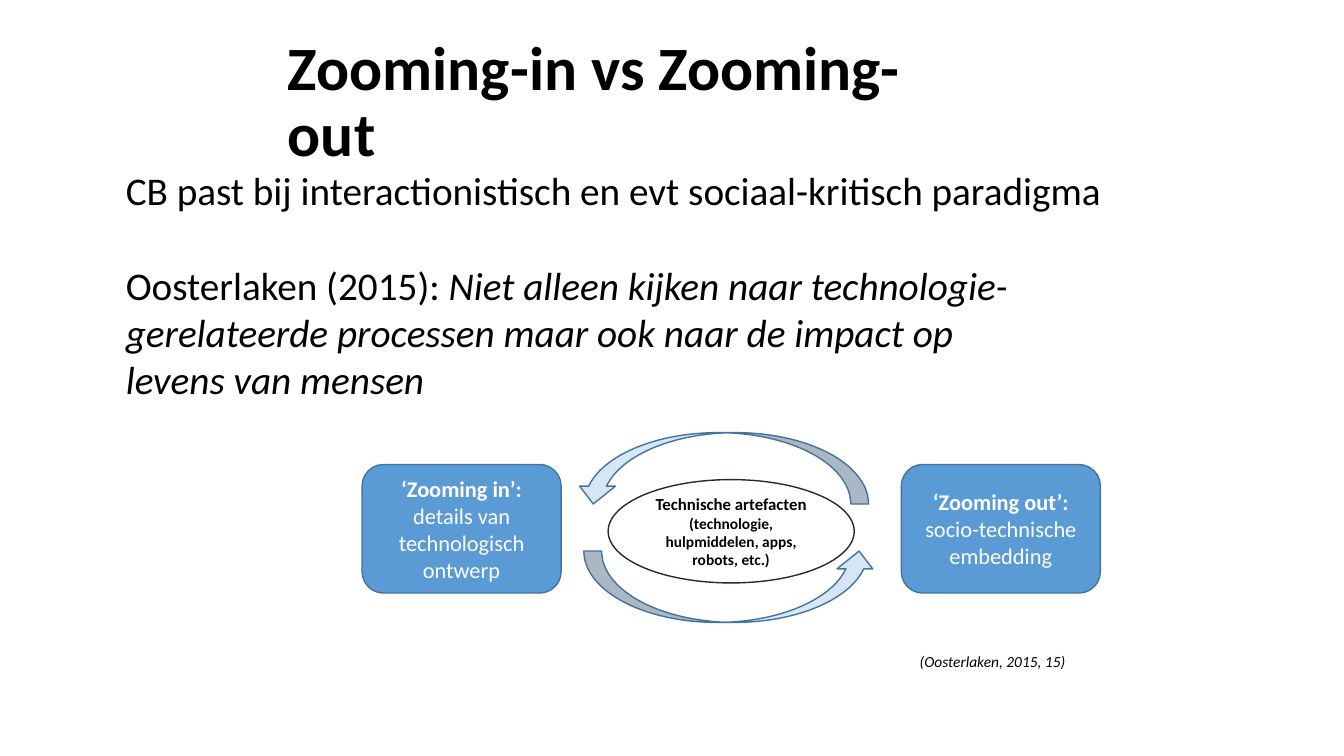
from pptx import Presentation
from pptx.dml.color import RGBColor
from pptx.enum.shapes import MSO_SHAPE
from pptx.enum.text import MSO_ANCHOR, PP_ALIGN
from pptx.util import Inches, Pt

COLOURS = {
    "text": "000000",
    "white": "FFFFFF",
    "box": "5B9BD5",
    "arrow": "D6E6F4",
    "outline": "43739E",
    "ellipse outline": "222A35",
}
COLUMNS, ROWS = 160, 90


def colour(name):
    return RGBColor.from_string(COLOURS[name])


class SlideBuilder:
    """Style and current slide; places are (column, row, columns, rows)."""

    font = "Calibri"

    def __init__(self, presentation):
        self.column = presentation.slide_width / COLUMNS
        self.row = presentation.slide_height / ROWS
        self.slide = presentation.slides.add_slide(presentation.slide_layouts[6])

    def place(self, left, top, width, height):
        return (round(left * self.column), round(top * self.row),
                round(width * self.column), round(height * self.row))

    def fill_text(self, frame, paragraphs, ink="text", align=PP_ALIGN.LEFT,
                  anchor=MSO_ANCHOR.TOP, wrap=True, line_spacing=None, gaps=()):
        """Each paragraph is a list of runs: (text, size, styles)."""
        frame.word_wrap = wrap
        frame.vertical_anchor = anchor
        for index, runs in enumerate(paragraphs):
            paragraph = frame.add_paragraph() if index else frame.paragraphs[0]
            paragraph.alignment = align
            if line_spacing:
                paragraph.line_spacing = line_spacing
            if index in gaps:
                paragraph.space_before = Pt(34)
            for text, size, styles in runs:
                run = paragraph.add_run()
                run.text = text
                run.font.name = self.font
                run.font.size = Pt(size)
                run.font.bold = "bold" in styles
                run.font.italic = "italic" in styles
                run.font.color.rgb = colour(ink)

    def text(self, place, paragraphs, **options):
        box = self.slide.shapes.add_textbox(*self.place(*place))
        self.fill_text(box.text_frame, paragraphs, **options)

    def shape(self, kind, place, fill, outline="outline", rotation=0,
              paragraphs=(), ink="white"):
        shape = self.slide.shapes.add_shape(kind, *self.place(*place))
        shape.shadow.inherit = False
        shape.fill.solid()
        shape.fill.fore_color.rgb = colour(fill)
        shape.line.color.rgb = colour(outline)
        shape.line.width = Pt(1)
        shape.rotation = rotation
        self.fill_text(shape.text_frame, paragraphs, ink=ink,
                       align=PP_ALIGN.CENTER, anchor=MSO_ANCHOR.MIDDLE)


def main():
    presentation = Presentation()
    presentation.slide_width = Inches(13.33)
    presentation.slide_height = Inches(7.5)
    builder = SlideBuilder(presentation)

    # Title and body
    builder.text((33.1, 3.6, 84.7, 17.4),
                 [[("Zooming-in vs Zooming-out", 44, "bold")]],
                 anchor=MSO_ANCHOR.MIDDLE, line_spacing=0.9)
    builder.text((13.8, 19.2, 121.4, 65.5), [
        [("CB past bij interactionistisch en evt sociaal-kritisch paradigma", 28, "")],
        [("Oosterlaken (2015): ", 28, ""),
         ("Niet alleen kijken naar technologie-gerelateerde processen "
          "maar ook naar de impact op", 28, "italic")],
        [("levens van mensen", 28, "italic")],
    ], gaps=(1,))

    # Zooming boxes
    for left, heading, detail in (
        (43.1, "‘Zooming in’:", "details van technologisch ontwerp"),
        (107.3, "‘Zooming out’:", "socio-technische embedding"),
    ):
        builder.shape(MSO_SHAPE.ROUNDED_RECTANGLE, (left, 55.3, 23.7, 15.3), "box",
                      paragraphs=[[(heading, 16, "bold")], [(detail, 16, "")]])

    # Technical artefacts in the centre
    builder.shape(MSO_SHAPE.OVAL, (72.4, 57.1, 29.3, 12.3), "white",
                  outline="ellipse outline", ink="text", paragraphs=[
                      [("Technische artefacten", 12, "bold")],
                      [("(technologie, hulpmiddelen, apps, robots, etc.)", 11, "bold")],
                  ])

    # Circling arrows
    for left, top, rotation in ((69.5, 65.6, 0), (68.5, 51.5, 180)):
        builder.shape(MSO_SHAPE.CURVED_UP_ARROW, (left, top, 34.9, 8.5), "arrow",
                      rotation=rotation)

    # Reference
    builder.text((108.3, 77, 20, 3.5),
                 [[("(Oosterlaken, 2015, 15)", 11, "italic")]], wrap=False)

    presentation.save("out.pptx")


if __name__ == "__main__":
    main()
